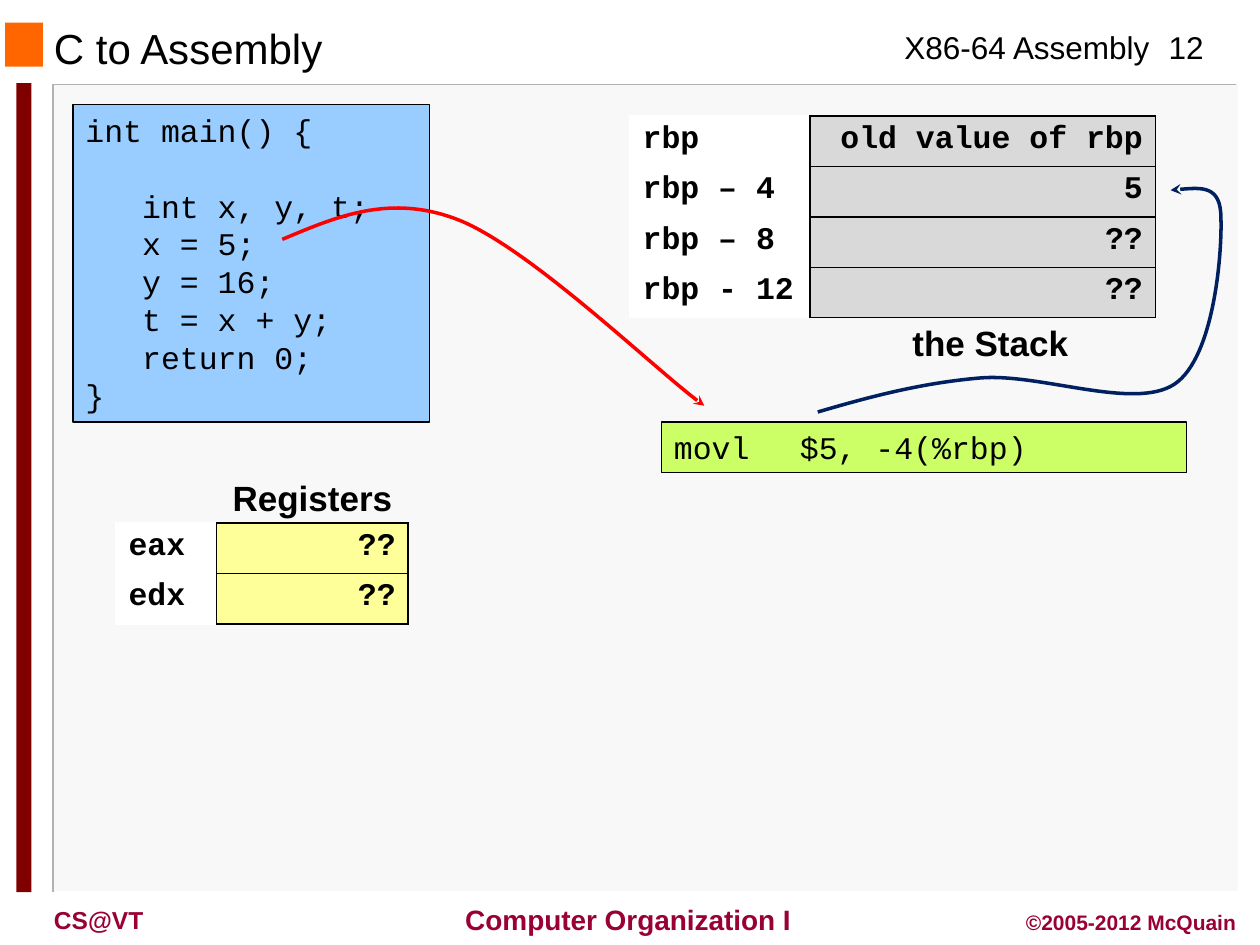
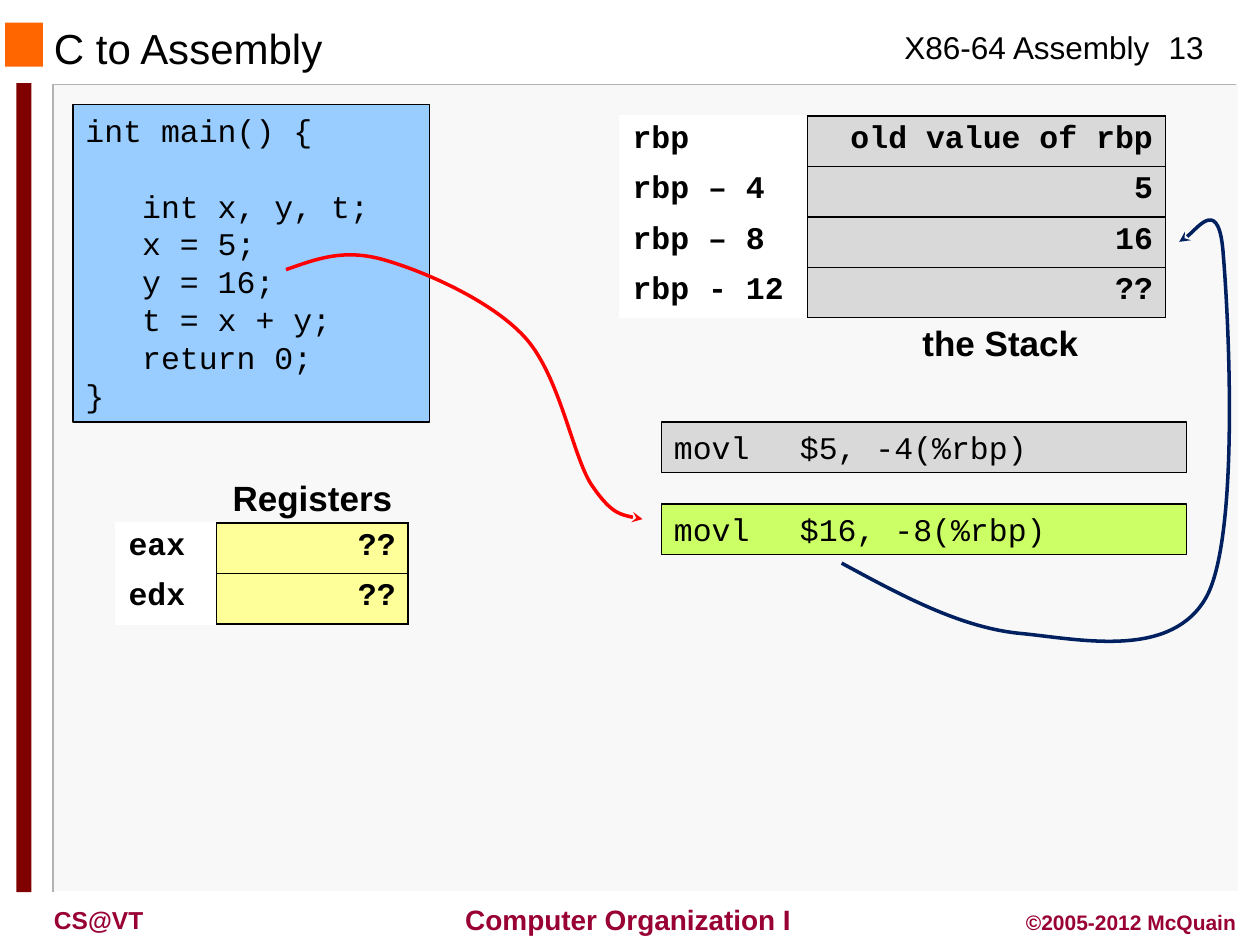
from lxml.etree import SubElement
from pptx import Presentation
from pptx.dml.color import RGBColor
from pptx.enum.shapes import MSO_SHAPE
from pptx.enum.text import MSO_ANCHOR, PP_ALIGN
from pptx.oxml.ns import qn
from pptx.util import Emu, Pt

PX = 9144
BLACK = RGBColor(0x00, 0x00, 0x00)
WHITE = RGBColor(0xFF, 0xFF, 0xFF)
PANEL = RGBColor(0xF8, 0xF8, 0xF8)
RULE = RGBColor(0xB2, 0xB2, 0xB2)
ORANGE = RGBColor(0xFF, 0x66, 0x00)
MAROON = RGBColor(0x80, 0x00, 0x00)
CRIMSON = RGBColor(0x99, 0x00, 0x33)
CODE_BLUE = RGBColor(0x99, 0xCC, 0xFF)
LIME = RGBColor(0xCC, 0xFF, 0x66)
GREY = RGBColor(0xD9, 0xD9, 0xD9)
YELLOW = RGBColor(0xFF, 0xFF, 0x99)
RED = RGBColor(0xFF, 0x00, 0x00)
NAVY = RGBColor(0x00, 0x20, 0x60)
SANS, MONO = "Arial", "Courier New"
LEFT, CENTER, RIGHT = PP_ALIGN.LEFT, PP_ALIGN.CENTER, PP_ALIGN.RIGHT
TOP, MIDDLE = MSO_ANCHOR.TOP, MSO_ANCHOR.MIDDLE

CODE_LINES = [
    ("int main() {", 0, 0),
    ("int x, y, t;", 3, 1),
    ("x = 5;", 3, 0),
    ("y = 16;", 3, 0),
    ("t = x + y;", 3, 0),
    ("return 0;", 3, 0),
    ("}", 0, 0),
]
CHAR_WIDTH, LINE_HEIGHT = Pt(10.8), Pt(21.7)

STEPS = [
    {
        "page": "12",
        "instructions": ["movl\t$5, -4(%rbp)"],
        "stack_left": 500, "stack_columns": (143, 274), "caption_left": 688,
        "stack_values": ["old value of rbp", "5", "??", "??"],
        "compile_arrow": [(224, 190), (267, 172), (310, 153), (365, 175),
                          (421, 198), (526, 299), (559, 322)],
        "store_arrow": [(649, 327), (690, 315), (731, 304), (778, 300),
                        (825, 296), (900, 326), (932, 305),
                        (964, 284), (970, 199), (969, 173),
                        (969, 147), (949, 149), (929, 151)],
    },
    {
        "page": "13",
        "instructions": ["movl\t$5, -4(%rbp)", "movl\t$16, -8(%rbp)"],
        "stack_left": 492, "stack_columns": (149, 284), "caption_left": 696,
        "stack_values": ["old value of rbp", "5", "16", "??"],
        "compile_arrow": [(227, 214), (250, 206), (272, 197), (304, 206),
                          (336, 215), (389, 238), (416, 267),
                          (444, 297), (454, 360), (469, 384),
                          (485, 408), (498, 410), (510, 412)],
        "store_arrow": [(668, 447), (716, 473), (764, 499), (812, 503),
                        (860, 508), (931, 523), (958, 473),
                        (984, 423), (975, 250), (971, 203),
                        (968, 156), (942, 191), (936, 192)],
    },
]


def write(paragraph, text, size, font, color, bold, align):
    paragraph.alignment = align
    run = paragraph.add_run()
    run.text = text
    run.font.size = Pt(size)
    run.font.name = font
    run.font.bold = bold
    run.font.color.rgb = color


def add_box(slide, bounds, fill, outline=None):
    box = slide.shapes.add_shape(MSO_SHAPE.RECTANGLE, *(Emu(n * PX) for n in bounds))
    box.shadow.inherit = False
    box.fill.solid()
    box.fill.fore_color.rgb = fill
    if outline is None:
        box.line.fill.background()
    else:
        box.line.color.rgb = outline
        box.line.width = Pt(0.75)
    box.text_frame.vertical_anchor = TOP
    return box


deck = Presentation()
deck.slide_width, deck.slide_height = Emu(1000 * PX), Emu(750 * PX)

for step in STEPS:
    slide = deck.slides.add_slide(deck.slide_layouts[6])

    add_box(slide, (43, 67, 940, 641), PANEL)
    for corners, color in [([(981, 67), (42, 67), (42, 708)], RULE),
                           ([(983, 67), (983, 708), (44, 708)], WHITE)]:
        outline = slide.shapes.build_freeform(*corners[0], scale=PX)
        outline.add_line_segments(corners[1:], close=False)
        edge = outline.convert_to_shape()
        edge.shadow.inherit = False
        edge.fill.background()
        edge.line.color.rgb = color
        edge.line.width = Pt(1)
    add_box(slide, (4, 18, 30, 35), ORANGE)
    add_box(slide, (13, 66, 12, 642), MAROON)

    for bounds, text, size, color, bold, align, anchor in [
        ((708, 17, 217, 40), "X86-64 Assembly", 18, BLACK, False, LEFT, TOP),
        ((350, 711, 291, 37), " Computer Organization I", 16, CRIMSON, True, CENTER, MIDDLE),
        ((908, 17, 67, 40), step["page"], 18, BLACK, False, CENTER, TOP),
        ((33, 713, 150, 33), "CS@VT", 14, CRIMSON, True, LEFT, TOP),
        ((783, 717, 208, 30), "©2005-2012 McQuain", 12, CRIMSON, True, RIGHT, TOP),
        ((33, 19, 633, 38), "C to Assembly", 24, BLACK, False, LEFT, MIDDLE),
        ((step["caption_left"], 250, 196, 44), "the Stack", 20, BLACK, True, CENTER, TOP),
        ((150, 373, 196, 44), "Registers", 20, BLACK, True, CENTER, TOP),
    ]:
        label = slide.shapes.add_textbox(*(Emu(n * PX) for n in bounds)).text_frame
        label.word_wrap = True
        label.vertical_anchor = anchor
        write(label.paragraphs[0], text, size, SANS, color, bold, align)

    program = add_box(slide, (58, 83, 283, 252), CODE_BLUE, BLACK).text_frame
    for number, (text, indent, lines_above) in enumerate(CODE_LINES):
        line = program.add_paragraph() if number else program.paragraphs[0]
        write(line, text, 18, MONO, BLACK, False, LEFT)
        line.space_before = lines_above * LINE_HEIGHT
        properties = line.runs[0].font and line.runs[0]._r.getparent().get_or_add_pPr()
        properties.set("marL", str(indent * CHAR_WIDTH))
        properties.set("indent", "0")

    for number, text in enumerate(step["instructions"]):
        current = number == len(step["instructions"]) - 1
        instruction = add_box(slide, (525, 335 + 65 * number, 417, 40),
                              LIME if current else GREY, BLACK)
        write(instruction.text_frame.paragraphs[0], text, 18, MONO, BLACK, False, LEFT)

    for left, top, columns, names, values, fill in [
        (step["stack_left"], 92, step["stack_columns"],
         ["rbp", "rbp – 4", "rbp – 8", "rbp - 12"], step["stack_values"], GREY),
        (92, 415, (80, 152), ["eax", "edx"], ["??", "??"], YELLOW),
    ]:
        table = slide.shapes.add_table(
            len(names), 2, Emu(left * PX), Emu(top * PX),
            Emu(sum(columns) * PX), Emu(40 * len(names) * PX)).table
        table.first_row = table.horz_banding = False
        for column, width in zip(table.columns, columns):
            column.width = Emu(width * PX)
        for row, pair in enumerate(zip(names, values)):
            for side, text in enumerate(pair):
                cell = table.cell(row, side)
                write(cell.text_frame.paragraphs[0], text, 18, MONO, BLACK, True,
                      RIGHT if side else LEFT)
                borders = ("a:lnL", "a:lnR", "a:lnT", "a:lnB") if side else ("a:lnR",)
                cell_properties = cell._tc.get_or_add_tcPr()
                for border in borders:
                    stroke = SubElement(cell_properties, qn(border), w=str(Pt(1)))
                    paint = SubElement(stroke, qn("a:solidFill"))
                    SubElement(paint, qn("a:srgbClr"), val=str(BLACK))
                cell.fill.solid()
                cell.fill.fore_color.rgb = fill if side else WHITE

    for points, color in [(step["compile_arrow"], RED), (step["store_arrow"], NAVY)]:
        route = slide.shapes.build_freeform(*points[0], scale=PX)
        route.add_line_segments(points[1:], close=False)
        arrow = route.convert_to_shape()
        arrow.shadow.inherit = False
        arrow.fill.background()
        arrow.line.color.rgb = color
        arrow.line.width = Pt(2)
        SubElement(arrow.element.spPr.find(qn("a:ln")), qn("a:tailEnd"), type="stealth")
        segments = list(arrow.element.iter(qn("a:lnTo")))
        for first in range(0, len(segments), 3):
            curve = SubElement(segments[first].getparent(), qn("a:cubicBezTo"))
            for segment in segments[first:first + 3]:
                curve.append(segment[0])
                segment.getparent().remove(segment)

deck.save("out.pptx")
